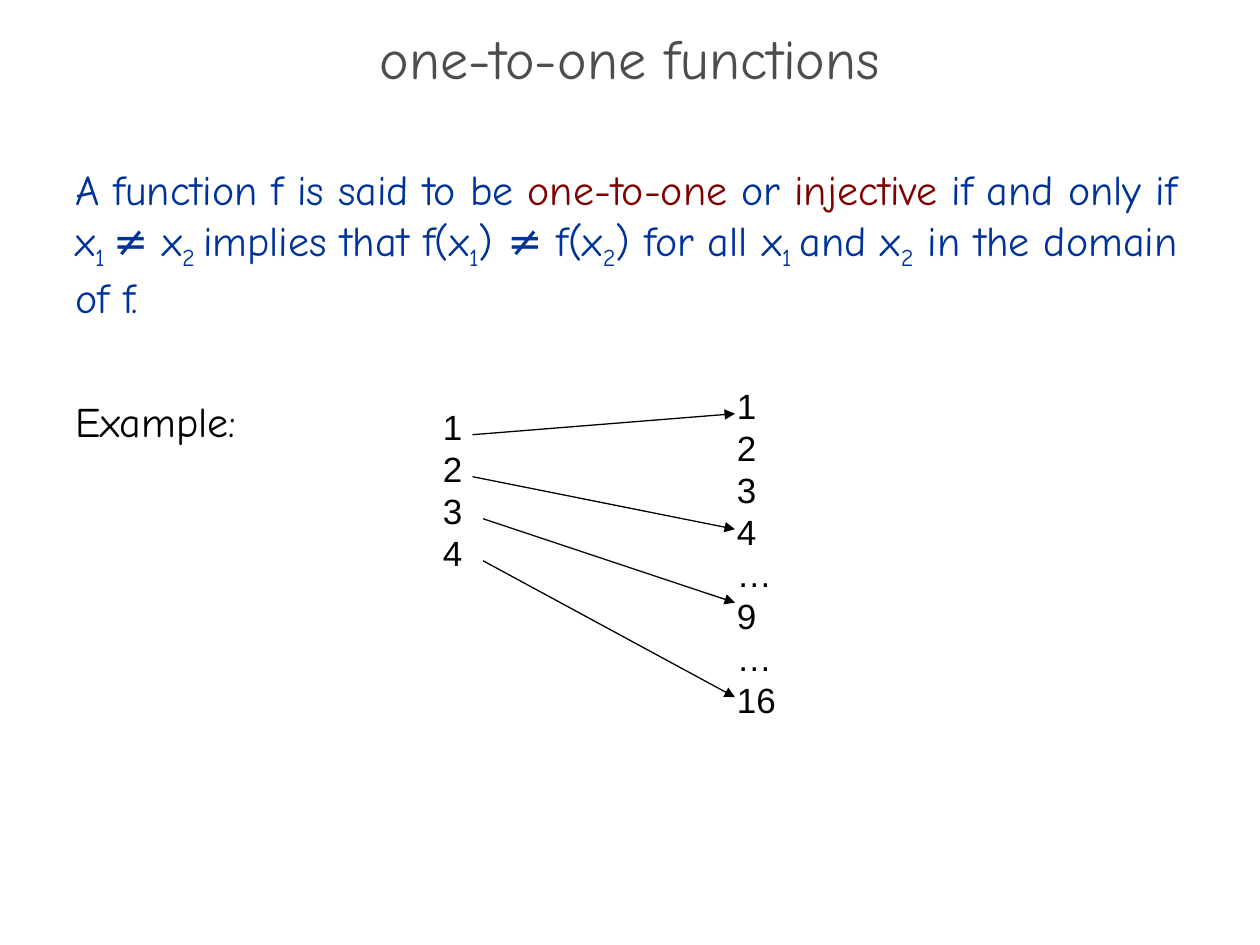
from pptx import Presentation
from pptx.dml.color import RGBColor
from pptx.enum import shapes, text
from pptx.oxml.ns import qn
from pptx.util import Inches, Pt
from lxml import etree

THEME = {
    "heading": {"name": "Comic Neue", "size": Pt(32), "color": "4D4D4D"},
    "body": {"name": "Comic Neue", "size": Pt(24), "color": "003399"},
    "term": {"name": "Comic Neue", "size": Pt(24), "color": "800000"},
    "example": {"name": "Comic Neue", "size": Pt(24), "color": "000000"},
    "number": {"name": "Arial", "size": Pt(20), "color": "000000"},
}
LINE_COLOR, LINE_WIDTH = "000000", Pt(0.75)

presentation = Presentation()
presentation.slide_width, presentation.slide_height = Inches(10), Inches(7.5)
# Grid of 120 columns by 90 rows
COLUMN = presentation.slide_width / 120
ROW = presentation.slide_height / 90
slide = presentation.slides.add_slide(presentation.slide_layouts[5])


def grid(left, top, width, height):
    return [round(n * cell) for n, cell in
            zip((left, top, width, height), (COLUMN, ROW, COLUMN, ROW))]


def add_run(paragraph, words, style):
    run = paragraph.add_run()
    run.text = words
    for attribute, value in THEME[style].items():
        if attribute == "color":
            run.font.color.rgb = RGBColor.from_string(value)
        else:
            setattr(run.font, attribute, value)
    return run


# Title
title = slide.shapes.title
title.left, title.top, title.width, title.height = grid(0, 3.2, 120, 6)
frame_format = {"vertical_anchor": text.MSO_ANCHOR.MIDDLE,
                "auto_size": text.MSO_AUTO_SIZE.NONE, "word_wrap": True}
for attribute, value in frame_format.items():
    setattr(title.text_frame, attribute, value)
heading = title.text_frame.paragraphs[0]
heading.alignment, heading.line_spacing = text.PP_ALIGN.CENTER, 0.7
add_run(heading, "one-to-one functions", "heading")

# Definition: plain text, terms and subscripts
definition_runs = [
    ("A function f is said to be ", "body"), ("one-to-one ", "term"),
    ("or ", "body"), ("injective", "term"), (" if and only if x", "body"),
    ("1 ", "sub"), ("≠ x", "body"), ("2 ", "sub"),
    ("implies that f(x", "body"), ("1", "sub"), (") ≠ f(x", "body"),
    ("2", "sub"), (") for all x", "body"), ("1 ", "sub"),
    ("and x", "body"), ("2", "sub"), (" in the domain of f.", "body"),
]
body = slide.shapes.add_textbox(*grid(6, 15, 111, 59.4)).text_frame
body.word_wrap = True
definition = body.paragraphs[0]
definition.space_after = Pt(6)
for words, style in definition_runs:
    run = add_run(definition, words, "body" if style == "sub" else style)
    if style == "sub":
        run.font._element.set("baseline", "-25000")

example = body.add_paragraph()
example.space_before, example.space_after = Pt(36), Pt(6)
add_run(example, "Example:", "example")

# Domain and codomain columns, one number every four rows
number_columns = [
    ((41, 38, 4.3, 17.2), ["1", "2", "3", "4"]),
    ((69, 36, 6.1, 33.2), ["1", "2", "3", "4", "…", "9", "…", "16"]),
]
for place, numbers in number_columns:
    frame = slide.shapes.add_textbox(*grid(*place)).text_frame
    frame.word_wrap = False
    for index, number in enumerate(numbers):
        paragraph = frame.add_paragraph() if index else frame.paragraphs[0]
        paragraph.line_spacing = Pt(24)
        add_run(paragraph, number, "number")

# Mapping arrows: start column and end row for each domain number
for index, (start, end_row) in enumerate([(45, 39.4), (45, 50.4), (46, 57.4), (46, 66.4)]):
    arrow = slide.shapes.add_connector(
        shapes.MSO_CONNECTOR.STRAIGHT, *grid(start, 41.4 + 4 * index, 70, end_row))
    arrow.line.color.rgb = RGBColor.from_string(LINE_COLOR)
    arrow.line.width = LINE_WIDTH
    etree.SubElement(arrow.line._get_or_add_ln(), qn("a:tailEnd"), type="triangle")
    etree.SubElement(arrow._element.spPr, qn("a:effectLst"))

presentation.save("out.pptx")
